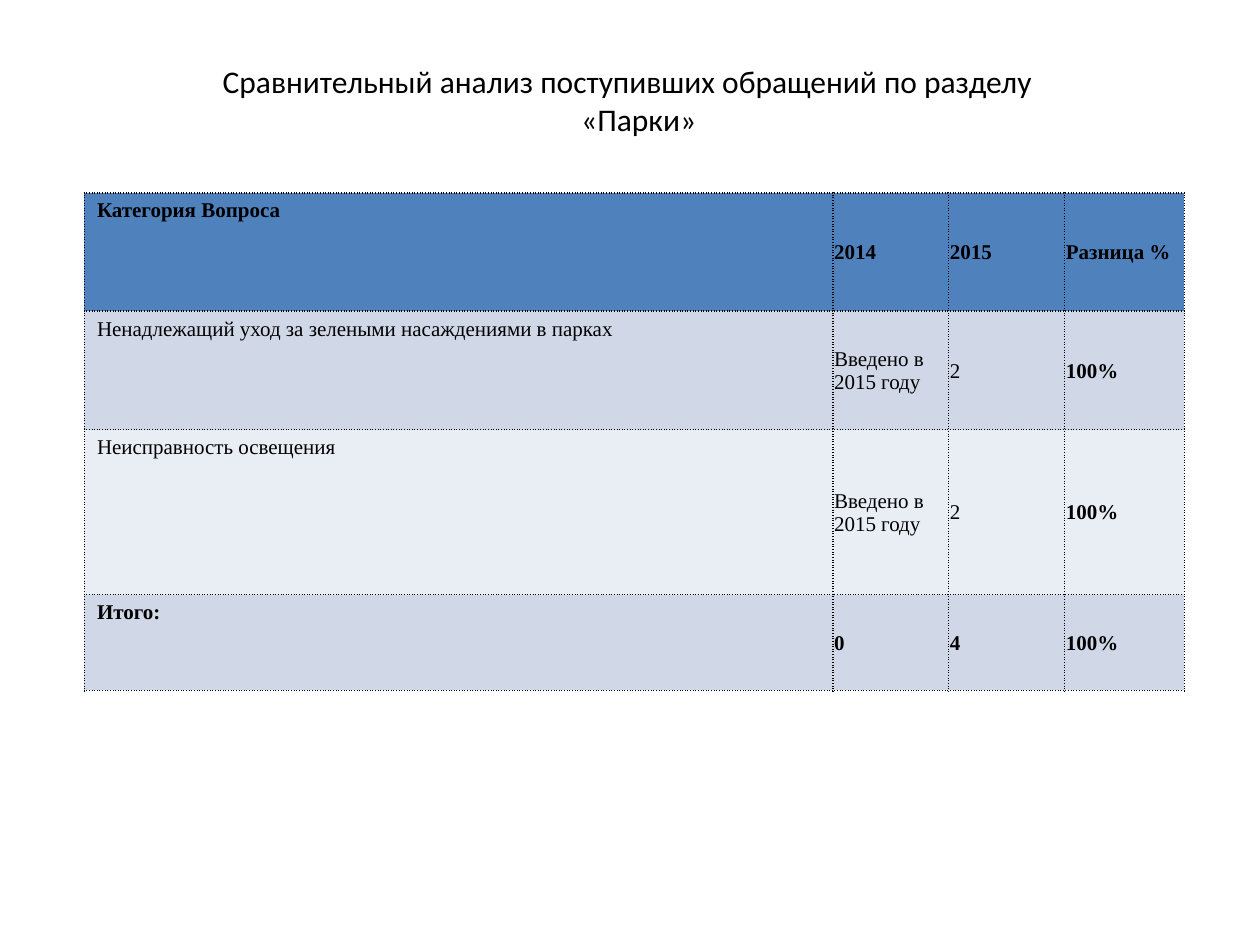
import pptx
import pptx.dml.color
import pptx.enum.text
import pptx.oxml.ns
import pptx.util
from lxml import etree
from pptx.util import Inches

TITLE_LINES = ["Сравнительный анализ поступивших обращений по разделу", "«Парки»"]
ROWS = [
    ("Категория Вопроса", "2014", "2015", "Разница %"),
    ("Ненадлежащий уход за зелеными насаждениями в парках", "Введено в 2015 году", "2", "100%"),
    ("Неисправность освещения", "Введено в 2015 году", "2", "100%"),
    ("Итого:", "0", "4", "100%"),
]
COLUMN_WIDTHS = [5.94, 0.92, 0.92, 0.95]
ROW_HEIGHTS = [0.94, 0.94, 1.31, 0.76]
THEME = {
    "text": "000000",
    "header": "4F81BD",
    "bands": ("D0D8E8", "E9EDF4"),
    "title_font": "Calibri",
    "table_font": "Times New Roman",
    "title_size": 18,
    "table_size": 12,
}


def style_text(paragraph, font, size, bold=False):
    """Set the font of every run in a paragraph."""
    for run in paragraph.runs:
        run.font.name = font
        run.font.size = pptx.util.Pt(size)
        run.font.bold = bold
        run.font.color.rgb = pptx.dml.color.RGBColor.from_string(THEME["text"])


def add_dotted_borders(cell):
    """Draw a dotted line on all four sides of a cell."""
    qn = pptx.oxml.ns.qn
    properties = cell._tc.get_or_add_tcPr()
    for position, side in enumerate(("a:lnL", "a:lnR", "a:lnT", "a:lnB")):
        border = etree.Element(qn(side), w=str(pptx.util.Pt(1)))
        fill = etree.SubElement(border, qn("a:solidFill"))
        etree.SubElement(fill, qn("a:srgbClr"), val=THEME["text"])
        etree.SubElement(border, qn("a:prstDash"), val="sysDot")
        properties.insert(position, border)


def add_title(slide):
    """Add the two centred title lines."""
    title = slide.shapes.add_textbox(Inches(0.48), Inches(0.49), Inches(9), Inches(0.6))
    frame = title.text_frame
    frame.word_wrap = True
    frame.margin_top = frame.margin_bottom = 0
    frame.vertical_anchor = pptx.enum.text.MSO_ANCHOR.MIDDLE
    frame.text = "\n".join(TITLE_LINES)
    for line in frame.paragraphs:
        line.alignment = pptx.enum.text.PP_ALIGN.CENTER
        style_text(line, THEME["title_font"], THEME["title_size"])
    frame.paragraphs[1]._p.get_or_add_pPr().set("marL", str(Inches(0.18)))


def add_comparison(slide):
    """Add the table that compares the two years."""
    comparison = slide.shapes.add_table(
        len(ROWS), len(COLUMN_WIDTHS), Inches(0.67), Inches(1.53),
        Inches(sum(COLUMN_WIDTHS)), Inches(sum(ROW_HEIGHTS))).table
    for column, width in zip(comparison.columns, COLUMN_WIDTHS):
        column.width = Inches(width)
    for row, height in zip(comparison.rows, ROW_HEIGHTS):
        row.height = Inches(height)
    last_row, last_column = len(ROWS) - 1, len(COLUMN_WIDTHS) - 1
    for r, values in enumerate(ROWS):
        background = THEME["bands"][(r - 1) % 2] if r else THEME["header"]
        for c, value in enumerate(values):
            cell = comparison.cell(r, c)
            cell.text_frame.text = value
            bold = r in (0, last_row) or c == last_column
            style_text(cell.text_frame.paragraphs[0], THEME["table_font"], THEME["table_size"], bold)
            cell.fill.solid()
            cell.fill.fore_color.rgb = pptx.dml.color.RGBColor.from_string(background)
            if c:
                cell.vertical_anchor = pptx.enum.text.MSO_ANCHOR.MIDDLE
                cell.margin_left = cell.margin_right = cell.margin_top = Inches(0.01)
                cell.margin_bottom = 0
            add_dotted_borders(cell)


def main():
    """Build the slide and save it."""
    presentation = pptx.Presentation()
    presentation.slide_width = Inches(10)
    presentation.slide_height = Inches(7.5)
    slide = presentation.slides.add_slide(presentation.slide_layouts[6])
    add_title(slide)
    add_comparison(slide)
    presentation.save("out.pptx")


if __name__ == "__main__":
    main()
